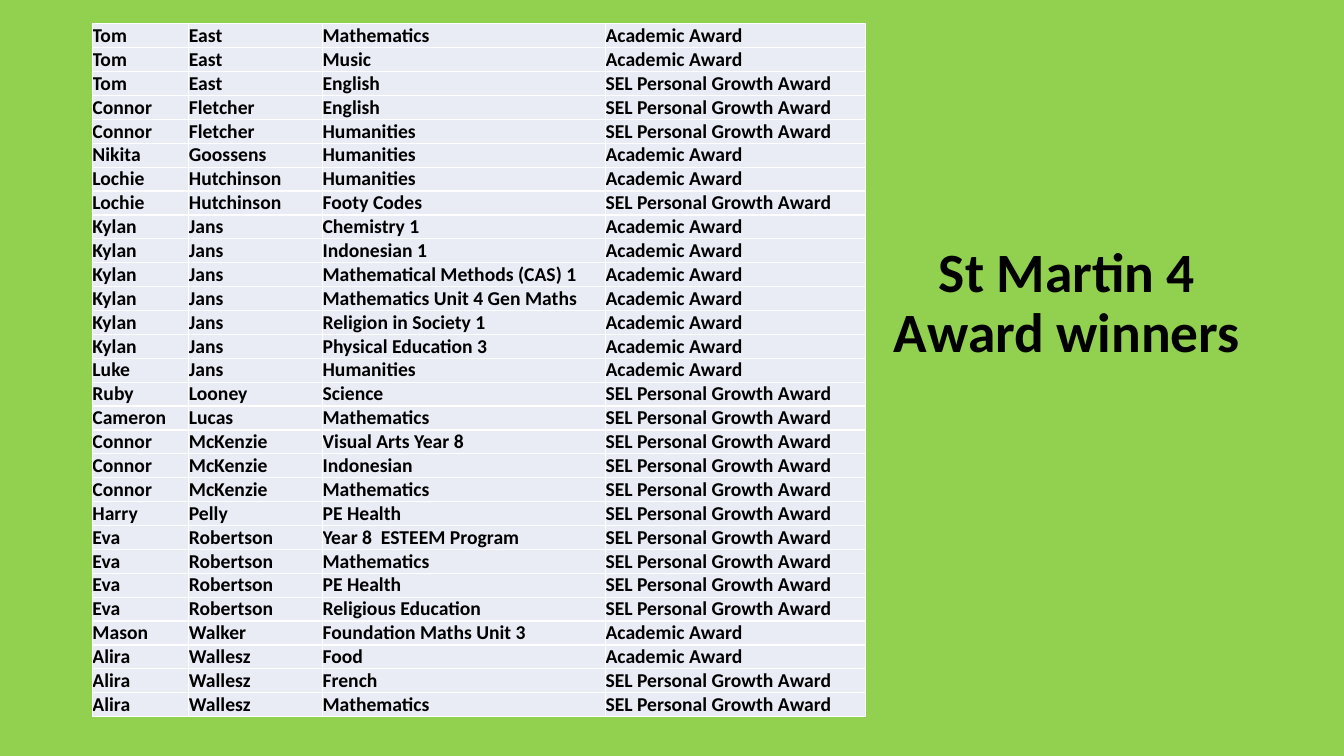
from lxml import etree
from pptx import Presentation
from pptx.dml.color import RGBColor
from pptx.enum.text import MSO_ANCHOR, MSO_AUTO_SIZE, PP_ALIGN
from pptx.oxml.ns import qn
from pptx.util import Cm, Pt

LEFT, CENTER = PP_ALIGN.LEFT, PP_ALIGN.CENTER
MIDDLE, BOTTOM = MSO_ANCHOR.MIDDLE, MSO_ANCHOR.BOTTOM
NO_AUTOFIT = MSO_AUTO_SIZE.NONE

# Content
HEADING = "St Martin 4 Award winners"
ACADEMIC = "Academic Award"
GROWTH = "SEL Personal Growth Award"
WINNERS = [
    ("Tom", "East", "Mathematics", ACADEMIC),
    ("Tom", "East", "Music", ACADEMIC),
    ("Tom", "East", "English", GROWTH),
    ("Connor", "Fletcher", "English", GROWTH),
    ("Connor", "Fletcher", "Humanities", GROWTH),
    ("Nikita", "Goossens", "Humanities", ACADEMIC),
    ("Lochie", "Hutchinson", "Humanities", ACADEMIC),
    ("Lochie", "Hutchinson", "Footy Codes", GROWTH),
    ("Kylan", "Jans", "Chemistry 1", ACADEMIC),
    ("Kylan", "Jans", "Indonesian 1", ACADEMIC),
    ("Kylan", "Jans", "Mathematical Methods (CAS) 1", ACADEMIC),
    ("Kylan", "Jans", "Mathematics Unit 4 Gen Maths", ACADEMIC),
    ("Kylan", "Jans", "Religion in Society 1", ACADEMIC),
    ("Kylan", "Jans", "Physical Education 3", ACADEMIC),
    ("Luke", "Jans", "Humanities", ACADEMIC),
    ("Ruby", "Looney", "Science", GROWTH),
    ("Cameron", "Lucas", "Mathematics", GROWTH),
    ("Connor", "McKenzie", "Visual Arts Year 8", GROWTH),
    ("Connor", "McKenzie", "Indonesian", GROWTH),
    ("Connor", "McKenzie", "Mathematics", GROWTH),
    ("Harry", "Pelly", "PE Health", GROWTH),
    ("Eva", "Robertson", "Year 8  ESTEEM Program", GROWTH),
    ("Eva", "Robertson", "Mathematics", GROWTH),
    ("Eva", "Robertson", "PE Health", GROWTH),
    ("Eva", "Robertson", "Religious Education", GROWTH),
    ("Mason", "Walker", "Foundation Maths Unit 3", ACADEMIC),
    ("Alira", "Wallesz", "Food", ACADEMIC),
    ("Alira", "Wallesz", "French", GROWTH),
    ("Alira", "Wallesz", "Mathematics", GROWTH),
]

# Layout in centimetres
COLUMN_WIDTHS = [2.43, 3.37, 7.13, 6.55]
ROW_HEIGHT = 0.6
TABLE_LEFT, TABLE_TOP = 2.33, 0.6

GREEN, PALE, WHITE, BLACK = "92D050", "E9EBF5", "FFFFFF", "000000"


def color(value):
    return RGBColor.from_string(value)


def write(frame, text, size, align=LEFT, spacing=1.0):
    paragraph = frame.paragraphs[0]
    paragraph.alignment = align
    paragraph.line_spacing = spacing
    run = paragraph.add_run()
    run.text = text
    run.font.name = "Calibri"
    run.font.size = Pt(size)
    run.font.bold = True
    run.font.color.rgb = color(BLACK)


def fill_cell(cell, text):
    cell.margin_left = cell.margin_right = cell.margin_top = cell.margin_bottom = 0
    cell.vertical_anchor = BOTTOM
    write(cell.text_frame, text, 14)
    # Borders go before the fill in the cell properties
    properties = cell._tc.get_or_add_tcPr()
    for side in ("a:lnL", "a:lnR", "a:lnT", "a:lnB"):
        border = etree.SubElement(properties, qn(side), w=str(Pt(1)))
        paint = etree.SubElement(border, qn("a:solidFill"))
        etree.SubElement(paint, qn("a:srgbClr"), val=WHITE)
    cell.fill.solid()
    cell.fill.fore_color.rgb = color(PALE)


def main():
    deck = Presentation()
    deck.slide_width, deck.slide_height = Cm(33.87), Cm(19.05)
    slide = deck.slides.add_slide(deck.slide_layouts[5])
    slide.background.fill.solid()
    slide.background.fill.fore_color.rgb = color(GREEN)

    # Heading
    heading = slide.shapes.title
    heading.left, heading.top = Cm(22.25), Cm(5.56)
    heading.width, heading.height = Cm(9.28), Cm(4.22)
    frame = heading.text_frame
    frame.word_wrap = True
    frame.auto_size = NO_AUTOFIT
    frame.vertical_anchor = MIDDLE
    write(frame, HEADING, 39.6, align=CENTER, spacing=0.9)

    # Award table
    awards = slide.shapes.add_table(
        len(WINNERS), len(COLUMN_WIDTHS), Cm(TABLE_LEFT), Cm(TABLE_TOP),
        Cm(sum(COLUMN_WIDTHS)), Cm(ROW_HEIGHT * len(WINNERS))).table
    awards.first_row = awards.horz_banding = False
    for column, width in zip(awards.columns, COLUMN_WIDTHS):
        column.width = Cm(width)
    for row, winner in zip(awards.rows, WINNERS):
        row.height = Cm(ROW_HEIGHT)
        for cell, text in zip(row.cells, winner):
            fill_cell(cell, text)

    deck.save("out.pptx")


if __name__ == "__main__":
    main()
